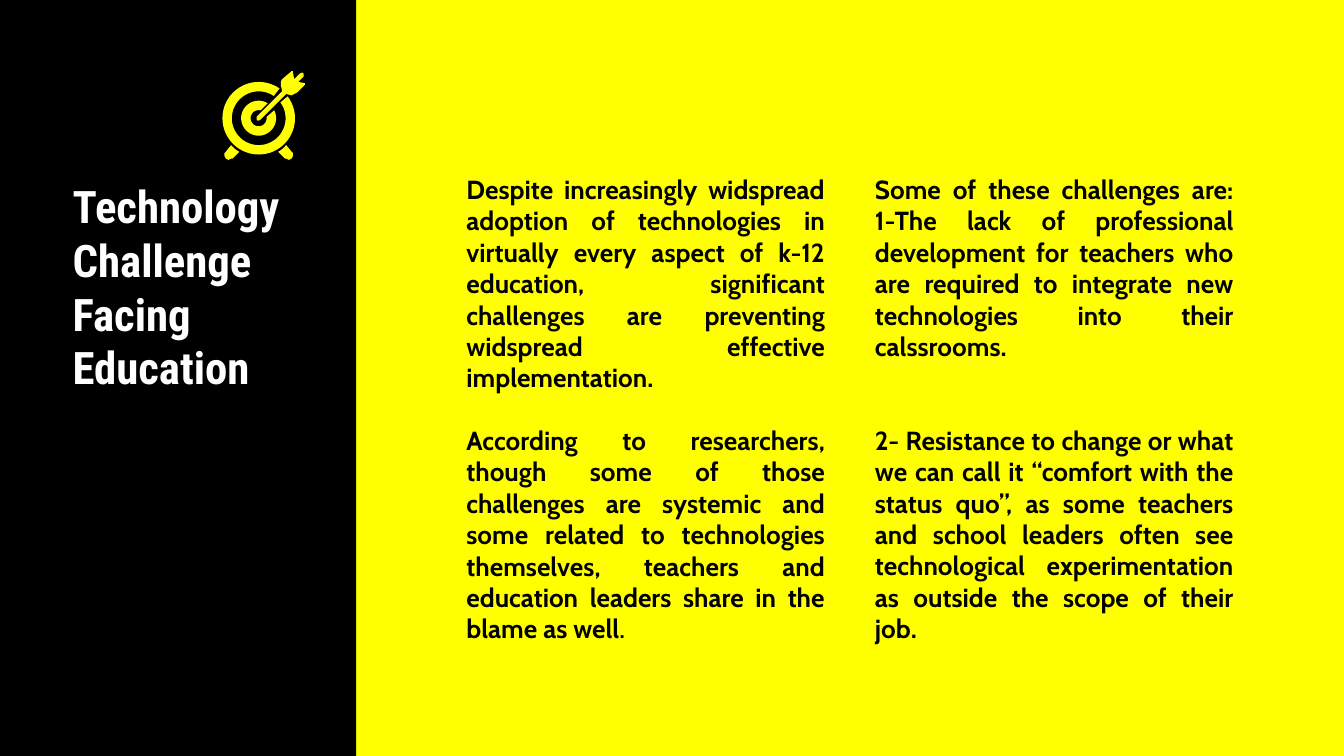
from math import cos, radians, sin

from pptx import Presentation
from pptx.dml.color import RGBColor
from pptx.enum.shapes import MSO_SHAPE as Shape
from pptx.enum.text import MSO_ANCHOR as Anchor, MSO_AUTO_SIZE as AutoSize, PP_ALIGN as Align
from pptx.oxml.ns import qn
from pptx.util import Inches, Pt

COLORS = {"yellow": "FFFF00", "black": "000000", "white": "FFFFFF"}
TITLE = "Technology Challenge Facing Education"

# Each column: left edge, gap between paragraphs in points, paragraphs of (text, size) runs
COLUMNS = [
    (3.37, 16.8, [
        [("Despite increasingly widspread adoption of technologies in virtually every "
          "aspect of k-12 education, significant challenges are preventing widspread "
          "effective implementation.", 14)],
        [("According to researchers, though some of those challenges are systemic and "
          "some related to technologies themselves, teachers and education leaders "
          "share in the blame as well", 14), (".", 12)],
    ]),
    (6.41, 33.6, [
        [("Some of these challenges are: 1-The lack of professional development for "
          "teachers who are required to integrate new technologies into their "
          "calssrooms.", 14)],
        [("2- Resistance to change or what we can call it “comfort with the status "
          "quo”, as some teachers and school leaders often see technological "
          "experimentation as outside the scope of their job.", 14)],
    ]),
]

# Target icon, in inches; each ring: outer radius, its gap angles, inner radius, its gap angles
CENTER_X, CENTER_Y = 1.925, 0.88
RINGS = [
    (0.27, (-37, -55), 0.2, (-36, -56)),
    (0.13, (-27, -59), 0.06, (-9, -76)),
]
LEFT_LEG = [(1.72, 1.08), (1.68, 1.13), (1.67, 1.14), (1.67, 1.16), (1.68, 1.18),
            (1.7, 1.19), (1.72, 1.18), (1.73, 1.18), (1.78, 1.13), (1.75, 1.11)]
RIGHT_LEG = [(2 * CENTER_X - x, y) for x, y in LEFT_LEG]
DART = [(2.17, 0.53), (2.1, 0.59), (2.09, 0.61), (2.09, 0.63), (2.1, 0.68),
        (1.91, 0.87), (1.91, 0.89), (1.92, 0.9), (1.94, 0.89), (2.13, 0.7),
        (2.17, 0.71), (2.19, 0.7), (2.21, 0.69), (2.27, 0.63), (2.27, 0.62),
        (2.22, 0.61), (2.26, 0.57), (2.26, 0.55), (2.25, 0.54), (2.23, 0.55),
        (2.19, 0.59), (2.18, 0.54), (2.18, 0.53)]


def color(name):
    return RGBColor.from_string(COLORS[name])


def paint(shape, name):
    shape.fill.solid()
    shape.fill.fore_color.rgb = color(name)
    shape.line.fill.background()
    shape.shadow.inherit = False


def place(box, left, top, width, height):
    box.left, box.top = Inches(left), Inches(top)
    box.width, box.height = Inches(width), Inches(height)
    frame = box.text_frame
    frame.margin_left = frame.margin_right = Inches(0.1)
    frame.margin_top = frame.margin_bottom = Inches(0.1)
    frame.word_wrap = True
    frame.auto_size = AutoSize.NONE
    frame.vertical_anchor = Anchor.TOP
    return frame


def style(para, font, size, name, align):
    para.alignment = align
    para.line_spacing = 1.0
    para.font.name, para.font.size, para.font.bold = font, Pt(size), True
    para.font.color.rgb = color(name)


def remove_bullet(para):
    properties = para._p.get_or_add_pPr()
    properties.set("marL", "0")
    properties.set("indent", "0")
    bullet = properties.makeelement(qn("a:buNone"), {})
    properties.insert_element_before(bullet, "a:tabLst", "a:defRPr", "a:extLst")


def arc(radius, start, end, steps=60):
    angles = [radians(start + (end - start) * i / steps) for i in range(steps + 1)]
    return [(CENTER_X + radius * cos(a), CENTER_Y + radius * sin(a)) for a in angles]


def open_ring(outer, outer_gap, inner, inner_gap):
    return (arc(outer, outer_gap[0], outer_gap[1] + 360)
            + arc(inner, inner_gap[1] + 360, inner_gap[0]))


def main():
    deck = Presentation()
    deck.slide_width = Inches(10)
    deck.slide_height = deck.slide_width * 9 // 16
    page = deck.slides.add_slide(deck.slide_layouts.get_by_name("Two Content"))
    page.background.fill.solid()
    page.background.fill.fore_color.rgb = color("yellow")

    # Side panel, behind everything else
    panel = page.shapes.add_shape(Shape.RECTANGLE, 0, 0, Inches(2.65), deck.slide_height)
    paint(panel, "black")
    page.shapes._spTree.insert(2, panel._element)

    # Title
    frame = place(page.shapes.title, 0.44, 1.23, 1.86, 1.62)
    frame.text = TITLE
    style(frame.paragraphs[0], "Roboto Condensed", 24, "white", Align.LEFT)

    # Text columns
    bodies = list(page.placeholders)[1:]
    for body, (left, gap, paragraphs) in zip(bodies, COLUMNS):
        frame = place(body, left, 1.19, 2.87, 4.19)
        for index, runs in enumerate(paragraphs):
            para = frame.paragraphs[0] if index == 0 else frame.add_paragraph()
            style(para, "Cabin", 14, "black", Align.JUSTIFY)
            para.space_before = Pt(gap if index else 0)
            remove_bullet(para)
            for text, size in runs:
                span = para.add_run()
                span.text = text
                span.font.size = Pt(size)

    # Target icon
    icon = page.shapes.add_group_shape()
    for outline in [open_ring(*ring) for ring in RINGS] + [LEFT_LEG, RIGHT_LEG, DART]:
        points = [(Inches(x), Inches(y)) for x, y in outline]
        builder = icon.shapes.build_freeform(*points[0])
        builder.add_line_segments(points[1:], close=True)
        paint(builder.convert_to_shape(), "yellow")

    deck.save("out.pptx")


if __name__ == "__main__":
    main()
